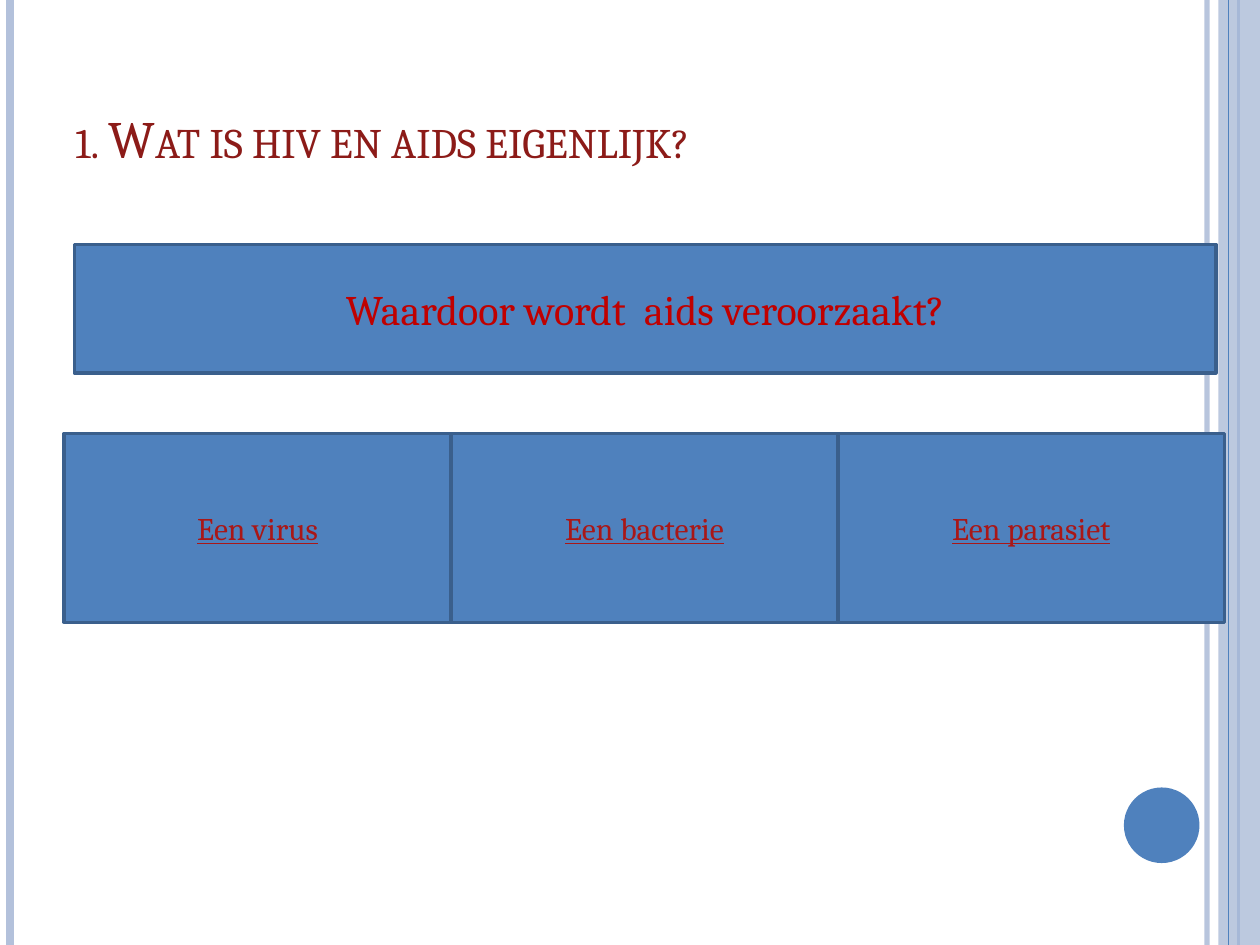
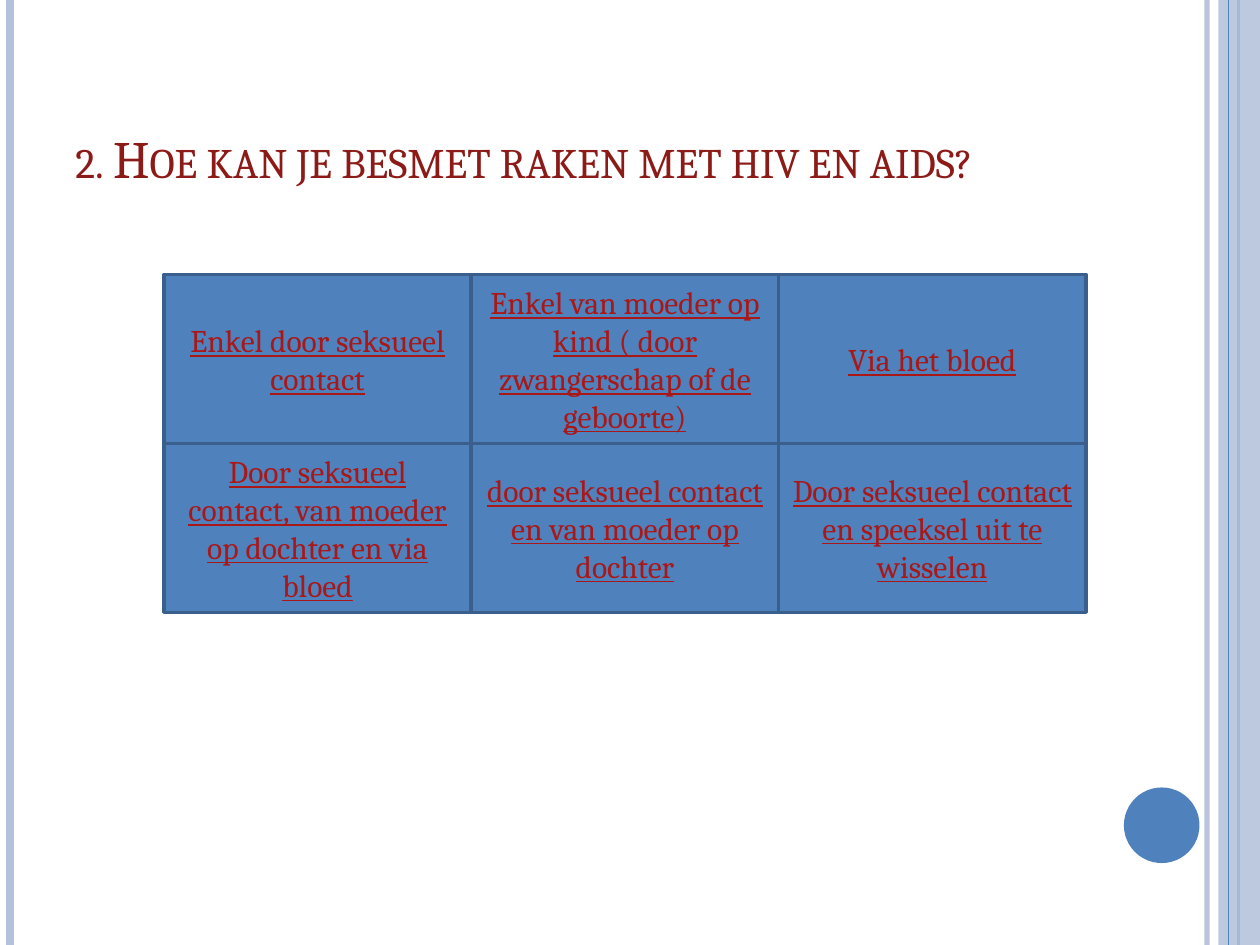
"""Build two quiz slides about hiv and aids."""
import pptx
import pptx.dml.color
import pptx.enum.shapes
import pptx.enum.text
import pptx.oxml.ns
import pptx.util
from lxml import etree

Inches = pptx.util.Inches
Pt = pptx.util.Pt
RGBColor = pptx.dml.color.RGBColor
Shape = pptx.enum.shapes.MSO_SHAPE
Anchor = pptx.enum.text.MSO_ANCHOR
Align = pptx.enum.text.PP_ALIGN
qn = pptx.oxml.ns.qn

BLUE = RGBColor(0x4F, 0x81, 0xBD)
PALE_BLUE = RGBColor(0xB3, 0xC1, 0xDB)
EDGE_BLUE = RGBColor(0x3A, 0x5F, 0x8C)
TITLE_RED = RGBColor(0x8C, 0x1B, 0x18)
QUESTION_RED = RGBColor(0xC0, 0x00, 0x00)
ANSWER_RED = RGBColor(0xA9, 0x17, 0x17)
FONT = "Cambria"
SLIDE_WIDTH, SLIDE_HEIGHT = 10, 7.5


def set_opacity(element, percent):
    """Set the opacity of the solid colour inside an XML element."""
    color = next(element.iter(qn("a:srgbClr")))
    etree.SubElement(color, qn("a:alpha")).set("val", str(percent * 1000))


def write_text(shape, text, size, color, align=Align.CENTER,
               anchor=Anchor.MIDDLE, underline=None, small_caps=False):
    """Write one formatted paragraph into a shape."""
    frame = shape.text_frame
    frame.word_wrap = True
    frame.vertical_anchor = anchor
    paragraph = frame.paragraphs[0]
    paragraph.alignment = align
    run = paragraph.add_run()
    run.text = text
    run.font.name = FONT
    run.font.size = Pt(size)
    run.font.color.rgb = color
    run.font.underline = underline
    if small_caps:
        run.font._element.set("cap", "small")


def add_box(slide, kind, left, top, width, height, fill=BLUE, edge=None):
    """Add a flat filled shape with an optional edge colour."""
    box = slide.shapes.add_shape(
        kind, Inches(left), Inches(top), Inches(width), Inches(height))
    box.shadow.inherit = False
    box.fill.solid()
    box.fill.fore_color.rgb = fill
    if edge is None:
        box.line.fill.background()
    else:
        box.line.color.rgb = edge
        box.line.width = Pt(2)
    return box


def add_stripe(slide, x, color, weight, opacity=100):
    """Add a vertical line over the full slide height."""
    stripe = slide.shapes.add_connector(
        pptx.enum.shapes.MSO_CONNECTOR.STRAIGHT,
        Inches(x), 0, Inches(x), Inches(SLIDE_HEIGHT))
    stripe.line.color.rgb = color
    stripe.line.width = Pt(weight)
    properties = stripe._element.spPr
    if opacity < 100:
        set_opacity(properties, opacity)
    etree.SubElement(properties, qn("a:effectLst"))


def add_title(slide, text, width, height):
    """Add the small-caps title, resting on the bottom of its box."""
    title = slide.shapes.add_textbox(
        Inches(0.5), Inches(0.3), Inches(width), Inches(height))
    write_text(title, text, size=30, color=TITLE_RED, align=Align.LEFT,
               anchor=Anchor.BOTTOM, small_caps=True)


def add_quiz_slide(deck, title, title_width, title_height):
    """Add a blank slide with the shared decoration and a title."""
    slide = deck.slides.add_slide(deck.slide_layouts[6])
    add_stripe(slide, 9.58, PALE_BLUE, 3, opacity=93)
    add_stripe(slide, 0.08, PALE_BLUE, 4.5)
    add_stripe(slide, 9.83, BLUE, 1.5)
    band = add_box(slide, Shape.RECTANGLE, 9.67, 0, 0.33, SLIDE_HEIGHT, PALE_BLUE)
    set_opacity(band._element.spPr, 87)
    add_stripe(slide, 9.75, BLUE, 0.75)
    add_box(slide, Shape.OVAL, 8.92, 6.25, 0.6, 0.6)
    add_title(slide, title, title_width, title_height)
    return slide


def add_question(slide, text):
    """Add the wide question bar."""
    bar = add_box(slide, Shape.RECTANGLE, 0.59, 1.94, 9.06, 1.02, edge=EDGE_BLUE)
    write_text(bar, text, size=24, color=QUESTION_RED)


def add_answers(slide, rows, left, top, width, height):
    """Add a grid of touching answer boxes."""
    for row, answers in enumerate(rows):
        for column, answer in enumerate(answers):
            box = add_box(slide, Shape.RECTANGLE, left + column * width,
                          top + row * height, width, height, edge=EDGE_BLUE)
            write_text(box, answer, size=18, color=ANSWER_RED, underline=True)


def main():
    """Build and save the deck."""
    deck = pptx.Presentation()
    deck.slide_width = Inches(SLIDE_WIDTH)
    deck.slide_height = Inches(SLIDE_HEIGHT)

    cause = add_quiz_slide(deck, "1. Wat is hiv en aids eigenlijk?", 9, 1.09)
    add_answers(cause, [["Een virus", "Een bacterie", "Een parasiet"]],
                left=0.51, top=3.44, width=3.07, height=1.5)
    add_question(cause, "Waardoor wordt  aids veroorzaakt?")

    infection = add_quiz_slide(
        deck, "2. Hoe kan je besmet raken met hiv en aids?", 8.17, 1.25)
    add_answers(infection, [
        ["Enkel door seksueel contact",
         "Enkel van moeder op kind ( door zwangerschap of de geboorte)",
         "Via het bloed"],
        ["Door seksueel contact, van moeder op dochter en via bloed",
         "door seksueel contact en van moeder op dochter",
         "Door seksueel contact en speeksel uit te wisselen"],
    ], left=1.3, top=2.18, width=2.44, height=1.34)

    deck.save("out.pptx")


if __name__ == "__main__":
    main()
